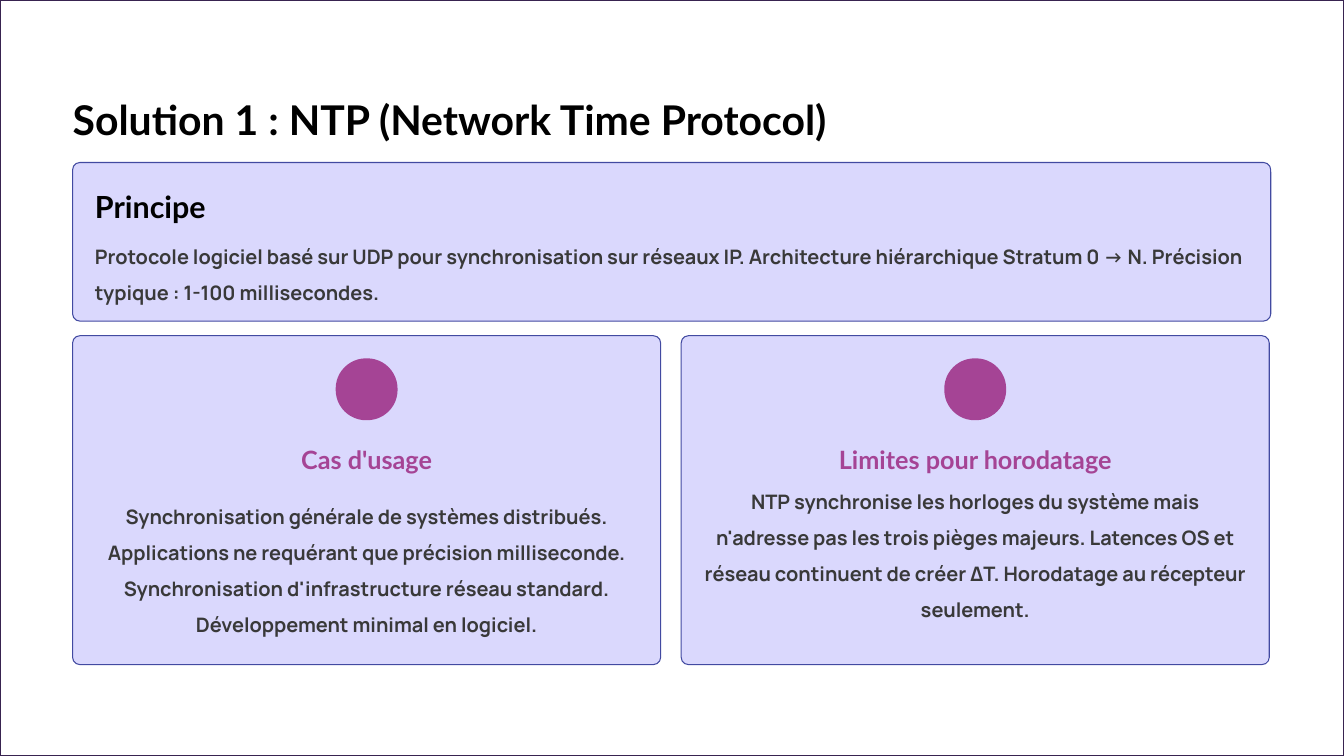
from dataclasses import dataclass

from lxml.etree import SubElement
from pptx import Presentation
from pptx.dml.color import RGBColor
from pptx.enum.shapes import MSO_SHAPE as Preset
from pptx.enum.text import MSO_ANCHOR as Anchor, MSO_AUTO_SIZE as AutoSize, PP_ALIGN as Align
from pptx.oxml.ns import qn
from pptx.util import Cm, Pt


@dataclass(frozen=True)
class Theme:
    white: str = "FFFFFF"
    frame: str = "382350"
    panel: str = "DAD8FD"
    border: str = "424AA1"
    accent: str = "A54495"
    title: str = "000000"
    body: str = "393939"
    heading_font: str = "Lato"
    body_font: str = "Manrope"
    title_size: int = 39
    section_size: int = 29
    card_size: int = 24
    body_size: int = 19


@dataclass(frozen=True)
class Box:
    """Left, top, width and height in centimetres."""
    left: float
    top: float
    width: float
    height: float

    def lengths(self) -> tuple:
        return tuple(Cm(value) for value in (self.left, self.top, self.width, self.height))


@dataclass(frozen=True)
class TextStyle:
    font: str
    size: int
    color: str
    spacing: float
    align: Align = Align.LEFT


@dataclass(frozen=True)
class Card:
    heading: str
    text: str
    text_height: float


THEME = Theme()
TITLE = TextStyle(THEME.heading_font, THEME.title_size, THEME.title, 1.2)
SECTION = TextStyle(THEME.heading_font, THEME.section_size, THEME.title, 1.2)
CARD_HEADING = TextStyle(THEME.heading_font, THEME.card_size, THEME.accent, 1.2, Align.CENTER)
BODY = TextStyle(THEME.body_font, THEME.body_size, THEME.body, 1.5)
CARD_BODY = TextStyle(THEME.body_font, THEME.body_size, THEME.body, 1.5, Align.CENTER)

PAGE = Box(0, 0, 45.16, 25.4)
MARGIN = 2.44
CONTENT_WIDTH = 40.26
PADDING = 0.75
CARD_WIDTH = 19.76
CARD_PITCH = 20.45
BADGE_SIZE = 2.08

CARDS = [
    Card("Cas d'usage",
         "Synchronisation générale de systèmes distribués. Applications ne requérant que "
         "précision milliseconde. Synchronisation d'infrastructure réseau standard. "
         "Développement minimal en logiciel.", 5.23),
    Card("Limites pour horodatage",
         "NTP synchronise les horloges du système mais n'adresse pas les trois pièges majeurs. "
         "Latences OS et réseau continuent de créer ΔT. Horodatage au récepteur seulement.", 4.19),
]


def add_panel(slide, box: Box, fill: str, line: str | None = None,
              line_width: float = 1, corner: float | None = None):
    """Draw a rectangle, rounded when a corner ratio is given."""
    preset = Preset.RECTANGLE if corner is None else Preset.ROUNDED_RECTANGLE
    shape = slide.shapes.add_shape(preset, *box.lengths())
    shape.shadow.inherit = False
    if corner is not None:
        shape.adjustments[0] = corner
    shape.fill.solid()
    shape.fill.fore_color.rgb = RGBColor.from_string(fill)
    if line is None:
        shape.line.fill.background()
    else:
        shape.line.color.rgb = RGBColor.from_string(line)
        shape.line.width = Pt(line_width)
    return shape


def set_opacity(shape, percent: int) -> None:
    color = shape.fill._xPr.find(qn("a:solidFill"))[0]
    SubElement(color, qn("a:alpha"), val=str(percent * 1000))


def write_text(shape, text: str, style: TextStyle) -> None:
    frame = shape.text_frame
    frame_format = dict(word_wrap=True, auto_size=AutoSize.NONE, vertical_anchor=Anchor.MIDDLE,
                        margin_left=0, margin_top=0, margin_right=0, margin_bottom=0)
    for name, value in frame_format.items():
        setattr(frame, name, value)
    para = frame.paragraphs[0]
    para.alignment = style.align
    para.line_spacing = style.spacing
    span = para.add_run()
    span.text = text
    for name, value in dict(name=style.font, size=Pt(style.size), bold=True).items():
        setattr(span.font, name, value)
    span.font.color.rgb = RGBColor.from_string(style.color)


def add_text(slide, box: Box, text: str, style: TextStyle) -> None:
    write_text(slide.shapes.add_textbox(*box.lengths()), text, style)


def add_title(slide, box: Box, text: str) -> None:
    """Fill the title placeholder and bring it in front of the page frame."""
    title = slide.shapes.title
    for name, value in zip(("left", "top", "width", "height"), box.lengths()):
        setattr(title, name, value)
    write_text(title, text, TITLE)
    slide.shapes._spTree.append(title._element)


def add_principle(slide) -> None:
    add_panel(slide, Box(MARGIN, 5.46, CONTENT_WIDTH, 5.33), THEME.panel, THEME.border, corner=0.046)
    left, width = MARGIN + PADDING, CONTENT_WIDTH - 2 * PADDING
    add_text(slide, Box(left, 6.2, width, 1.24), "Principe", SECTION)
    add_text(slide, Box(left, 7.98, width, 2.08),
             "Protocole logiciel basé sur UDP pour synchronisation sur réseaux IP. Architecture "
             "hiérarchique Stratum 0 → N. Précision typique : 1-100 millisecondes.", BODY)


def add_card(slide, card: Card, left: float) -> None:
    add_panel(slide, Box(left, 11.28, CARD_WIDTH, 11.05), THEME.panel, THEME.border, corner=0.022)
    badge_left = left + (CARD_WIDTH - BADGE_SIZE) / 2
    add_panel(slide, Box(badge_left, 12.04, BADGE_SIZE, BADGE_SIZE), THEME.accent, corner=0.49)
    text_left, text_width = left + PADDING, CARD_WIDTH - 2 * PADDING
    add_text(slide, Box(text_left, 14.81, text_width, 1.02), card.heading, CARD_HEADING)
    add_text(slide, Box(text_left, 16.36, text_width, card.text_height), card.text, CARD_BODY)


def main() -> None:
    deck = Presentation()
    deck.slide_width, deck.slide_height = Cm(PAGE.width), Cm(PAGE.height)
    slide = deck.slides.add_slide(deck.slide_layouts.get_by_name("Title Only"))
    set_opacity(add_panel(slide, PAGE, THEME.white, THEME.frame, line_width=2), 80)
    add_title(slide, Box(MARGIN, 3, CONTENT_WIDTH, 1.65), "Solution 1 : NTP (Network Time Protocol)")
    add_principle(slide)
    for index, card in enumerate(CARDS):
        add_card(slide, card, MARGIN + index * CARD_PITCH)
    deck.save("out.pptx")


if __name__ == "__main__":
    main()
